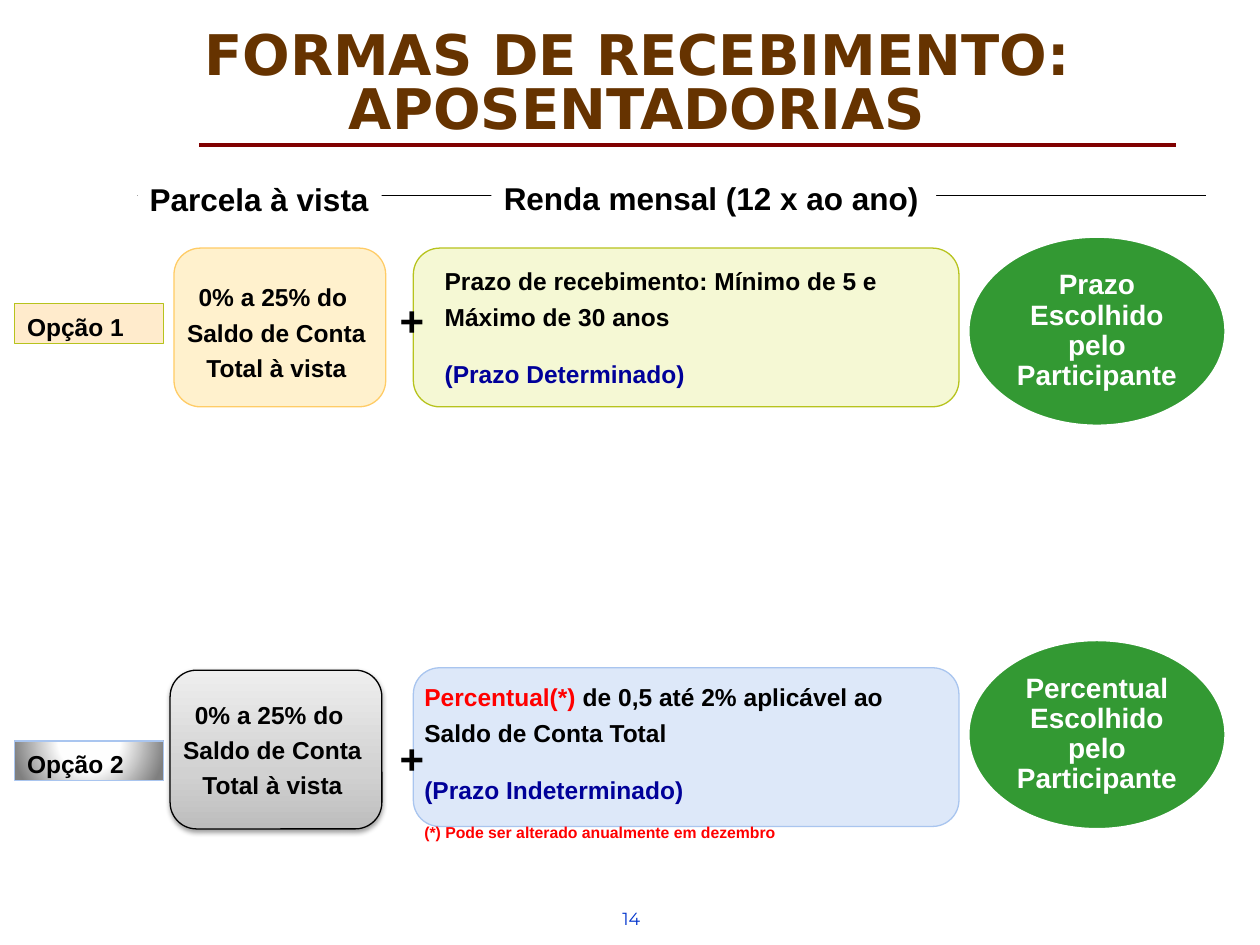
from lxml import etree
from pptx import Presentation
from pptx.dml.color import RGBColor
from pptx.enum.shapes import MSO_CONNECTOR, MSO_SHAPE
from pptx.enum.text import MSO_ANCHOR, PP_ALIGN
from pptx.oxml import parse_xml
from pptx.oxml.ns import nsdecls, qn
from pptx.util import Pt

LEFT, CENTER = PP_ALIGN.LEFT, PP_ALIGN.CENTER
TOP, MIDDLE, BOTTOM = MSO_ANCHOR.TOP, MSO_ANCHOR.MIDDLE, MSO_ANCHOR.BOTTOM
RECTANGLE, ROUNDED, OVAL = MSO_SHAPE.RECTANGLE, MSO_SHAPE.ROUNDED_RECTANGLE, MSO_SHAPE.OVAL
STRAIGHT = MSO_CONNECTOR.STRAIGHT
BLACK, WHITE, RED, NAVY, GREEN = "000000", "FFFFFF", "FF0000", "000099", "339933"
color = RGBColor.from_string

presentation = Presentation()
presentation.slide_width, presentation.slide_height = Pt(720), Pt(540)
slide = presentation.slides.add_slide(presentation.slide_layouts[5])
shapes = slide.shapes


def add_box(kind, left, top, width, height, fill=None, line=None, line_width=0.75):
    """Add a preset shape; a list of (percent, colour) stops as fill gives a gradient."""
    shape = shapes.add_shape(kind, Pt(left), Pt(top), Pt(width), Pt(height))
    shape.shadow.inherit = False
    if isinstance(fill, list):
        stops = "".join(
            f'<a:gs pos="{percent * 1000}"><a:srgbClr val="{value}"/></a:gs>' for percent, value in fill)
        if kind == RECTANGLE:
            direction = ('<a:path path="circle"><a:fillToRect l="50000" t="-80000" '
                         'r="50000" b="180000"/></a:path>')
        else:
            direction = '<a:lin ang="16200000" scaled="0"/>'
        shape._element.spPr.find(qn("a:prstGeom")).addnext(parse_xml(
            f'<a:gradFill {nsdecls("a")}><a:gsLst>{stops}</a:gsLst>{direction}</a:gradFill>'))
    elif fill:
        shape.fill.solid()
        shape.fill.fore_color.rgb = color(fill)
    else:
        shape.fill.background()
    if line:
        shape.line.color.rgb = color(line)
        shape.line.width = Pt(line_width)
    else:
        shape.line.fill.background()
    return shape


def write(shape, paragraphs, size, align=LEFT, anchor=TOP, wrap=True, spacing=1.2,
          inset=None, font="Arial", bold=True):
    """Fill a shape with paragraphs, each a list of (text, colour) runs; a note starts with (*)."""
    frame = shape.text_frame
    frame.word_wrap, frame.vertical_anchor = wrap, anchor
    if inset is not None:
        frame.margin_left = frame.margin_right = frame.margin_top = frame.margin_bottom = Pt(inset)
    for index, runs in enumerate(paragraphs):
        paragraph = frame.add_paragraph() if index else frame.paragraphs[0]
        paragraph.alignment, paragraph.line_spacing = align, spacing
        text_size = 9 if runs[0][0].startswith("(*)") else size
        if index:
            paragraph.space_before = Pt(text_size * 0.9)
        paragraph.font.size, paragraph.font.name = Pt(text_size), font
        paragraph.font.bold = bold
        for text, text_color in runs:
            for part, piece in enumerate(text.split("\n")):
                if part:
                    paragraph.add_line_break()
                run = paragraph.add_run()
                run.text = piece
                run.font.color.rgb = color(text_color)


# Title, rules and page number
title = shapes.title
title.left, title.top, title.width, title.height = Pt(0), Pt(26), Pt(728.5), Pt(54)
write(title, [[("FORMAS DE RECEBIMENTO: APOSENTADORIAS", "663300")]], 32, CENTER, BOTTOM,
      spacing=0.8, inset=0, font="DejaVu Sans")

for left, right, y, line_color, width in ((113.8, 671.8, 82.8, "800000", 2),
                                          (78.5, 689, 111.6, BLACK, 0.75)):
    rule = shapes.add_connector(STRAIGHT, Pt(left), Pt(y), Pt(right), Pt(y))
    rule.line.color.rgb = color(line_color)
    rule.line.width = Pt(width)
    etree.SubElement(rule._element.spPr, qn("a:effectLst"))

page_number = add_box(RECTANGLE, 348.5, 515.5, 51, 24.5)
write(page_number, [[("14", "0033CC")]], 10, spacing=1, font="Montserrat", bold=False)

# Column headings
for heading, left, top, width, height in (
        ("Parcela à vista", 78.5, 95, 139.7, 28.8),
        ("Renda mensal (12 x ao ano)", 280.8, 94.3, 254.2, 33.1)):
    write(add_box(RECTANGLE, left, top, width, height, WHITE), [[(heading, BLACK)]], 18, wrap=False)

# One row per option
options = [
    dict(label="Opção 1", label_top=173.5, label_fill="FFEBCC",
         cash_left=99.4, cash_top=141.8, cash_text_top=163.4, cash_fill="FFF1CD", cash_line="FFCC66",
         income_top=141.8, income_fill="F5F8D4", income_line="B7C31D",
         text_box=(247, 145.4, 300.2, 83.5), plus_top=158.4,
         terms=[[("Prazo de recebimento: Mínimo de 5 e Máximo de 30 anos", BLACK)],
                [("(Prazo Determinado)", NAVY)]],
         choice="Prazo Escolhido pelo Participante", choice_top=134.9),
    dict(label="Opção 2", label_top=423.4,
         label_fill=[(0, WHITE), (40, "FEFEFE"), (100, "7F7F7F")],
         cash_left=97.2, cash_top=383, cash_text_top=401.8,
         cash_fill=[(0, "BDBDBD"), (35, "D1D1D1"), (100, "EEEEEE")], cash_line=BLACK,
         income_top=381.6, income_fill="DDE8F9", income_line="A9C5EF",
         text_box=(235.4, 383, 317.5, 108.7), plus_top=409,
         terms=[[("Percentual(*) ", RED), ("de 0,5 até 2% aplicável ao Saldo de Conta Total", BLACK)],
                [("(Prazo Indeterminado)", NAVY)],
                [("(*) Pode ser alterado anualmente em dezembro", RED)]],
         choice="Percentual Escolhido pelo Participante", choice_top=365.4),
]

for option in options:
    label = add_box(RECTANGLE, 8.4, option["label_top"], 85.2, 22.7,
                    option["label_fill"], option["income_line"])
    write(label, [[(option["label"], BLACK)]], 14, anchor=MIDDLE, wrap=False)

    cash = add_box(ROUNDED, option["cash_left"], option["cash_top"], 121, 90.7,
                   option["cash_fill"], option["cash_line"])
    if option["cash_line"] == BLACK:
        cash._element.spPr.find(qn("a:effectLst")).append(parse_xml(
            f'<a:outerShdw {nsdecls("a")} blurRad="{Pt(3.1)}" dist="{Pt(1.6)}" dir="5400000" '
            'rotWithShape="0"><a:srgbClr val="000000"><a:alpha val="38000"/></a:srgbClr></a:outerShdw>'))
    cash_text = add_box(RECTANGLE, option["cash_left"] + 2.1, option["cash_text_top"], 113, 49.7)
    write(cash_text, [[("0% a 25% do \nSaldo de Conta\nTotal à vista", BLACK)]], 14,
          CENTER, MIDDLE, wrap=False)

    add_box(ROUNDED, 236.2, option["income_top"], 311.8, 90.7,
            option["income_fill"], option["income_line"])
    write(add_box(RECTANGLE, *option["text_box"]), option["terms"], 14)

    plus = add_box(RECTANGLE, 222.5, option["plus_top"], 13, 42.5, WHITE)
    write(plus, [[("+", BLACK)]], 24, anchor=MIDDLE)

    choice = add_box(OVAL, 553, option["choice_top"], 147.6, 108.7, GREEN, WHITE, 2)
    write(choice, [[(option["choice"], WHITE)]], 16, CENTER, MIDDLE, spacing=0.9, inset=2)

presentation.save("out.pptx")
